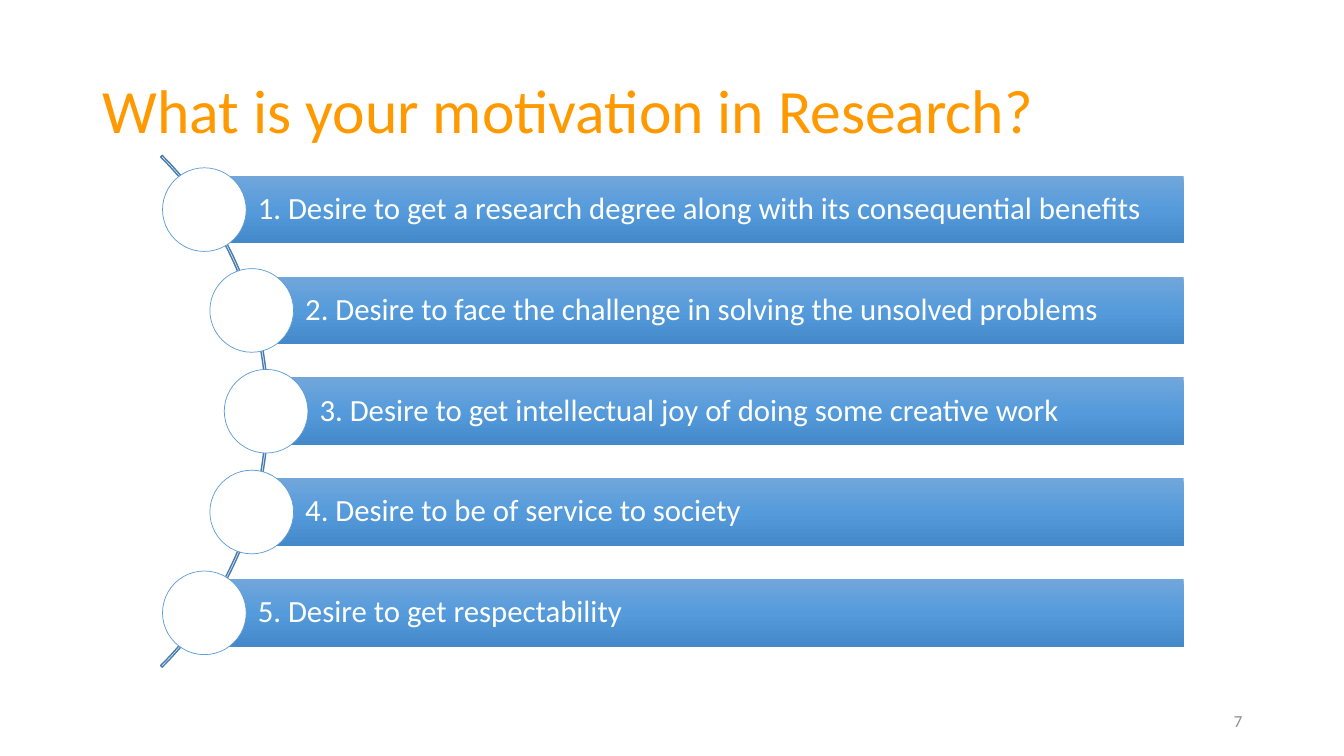
from math import sqrt
from pptx import Presentation
from pptx.dml.color import RGBColor
from pptx.enum.shapes import MSO_SHAPE
from pptx.enum.text import MSO_ANCHOR, PP_ALIGN
from pptx.oxml import parse_xml
from pptx.util import Inches, Pt

"""Build the research motivation slide."""

ARC, BAR, DOT = MSO_SHAPE.BLOCK_ARC, MSO_SHAPE.RECTANGLE, MSO_SHAPE.OVAL
LEFT, RIGHT, MID = PP_ALIGN.LEFT, PP_ALIGN.RIGHT, MSO_ANCHOR.MIDDLE

TITLE = "What is your motivation in Research?"
PAGE = "7"
GOALS = [
    "1. Desire to get a research degree along with its consequential benefits",
    "2. Desire to face the challenge in solving the unsolved problems",
    "3. Desire to get intellectual joy of doing some creative work",
    "4. Desire to be of service to society",
    "5. Desire to get respectability",
]
FADE = [(0, "71A6DB"), (50, "559BDB"), (100, "448ACA")]
WIDE, HIGH = 13.33, 7.5
HUB_X, HUB_Y, REACH = -0.93, 4.08, 3.57
ARC_R, STEP, BAR_H, DOT_D, EDGE = 3.59, 1.0, 0.67, 0.83, 11.74
NS = "http://schemas.openxmlformats.org/drawingml/2006/main"


def tint(code):
    return RGBColor.from_string(code)


def write(frame, text, size, code, align=LEFT, pads=(0.1, 0.05, 0.1, 0.05), lead=None):
    frame.word_wrap = True
    frame.vertical_anchor = MID
    (frame.margin_left, frame.margin_top,
     frame.margin_right, frame.margin_bottom) = map(Inches, pads)
    para = frame.paragraphs[0]
    para.alignment = align
    para.line_spacing = lead
    run = para.add_run()
    run.text = text
    run.font.size = Pt(size)
    run.font.name = "Calibri"
    run.font.color.rgb = tint(code)


def draw(group, kind, box, line=None, width=1, fill=None):
    shape = group.shapes.add_shape(kind, *map(Inches, box))
    shape.shadow.inherit = False
    if fill:
        shape.fill.solid()
        shape.fill.fore_color.rgb = tint(fill)
    else:
        shape.fill.background()
    if line:
        shape.line.color.rgb = tint(line)
        shape.line.width = Pt(width)
    else:
        shape.line.fill.background()
    return shape


def fade(shape):
    stops = "".join(
        f'<a:gs pos="{spot * 1000}"><a:srgbClr val="{code}"/></a:gs>'
        for spot, code in FADE)
    grad = parse_xml(
        f'<a:gradFill xmlns:a="{NS}" rotWithShape="1"><a:gsLst>{stops}</a:gsLst>'
        '<a:lin ang="5400000" scaled="0"/></a:gradFill>')
    props = shape.element.spPr
    props.replace(props.find(f"{{{NS}}}noFill"), grad)


def main():
    deck = Presentation()
    deck.slide_width, deck.slide_height = Inches(WIDE), Inches(HIGH)
    slide = deck.slides.add_slide(deck.slide_layouts[5])

    title = slide.shapes.title
    title.left, title.top, title.width, title.height = map(
        Inches, (0.92, 0.4, 11.5, 1.45))
    write(title.text_frame, TITLE, 44, "FF9900", lead=0.9)

    page = slide.shapes.add_textbox(*map(Inches, (9.42, 6.95, 3, 0.4)))
    write(page.text_frame, PAGE, 12, "8C8C8C", RIGHT)

    group = slide.shapes.add_group_shape()
    arc = draw(group, ARC, (HUB_X - ARC_R, HUB_Y - ARC_R, 2 * ARC_R, 2 * ARC_R),
               "497CAB")
    for spot, value in enumerate((189, 27, 0.003)):
        arc.adjustments[spot] = value

    for row, goal in enumerate(GOALS):
        drop = (row - (len(GOALS) - 1) / 2) * STEP
        x, y = HUB_X + sqrt(REACH ** 2 - drop ** 2), HUB_Y + drop
        bar = draw(group, BAR, (x, y - BAR_H / 2, EDGE - x, BAR_H))
        fade(bar)
        write(bar.text_frame, goal, 22, "FFFFFF",
              pads=(0.53, 0.06, 0.06, 0.06), lead=0.9)
        draw(group, DOT, (x - DOT_D / 2, y - DOT_D / 2, DOT_D, DOT_D),
             "5B9BD5", 0.5, "FFFFFF")

    deck.save("out.pptx")


if __name__ == "__main__":
    main()
